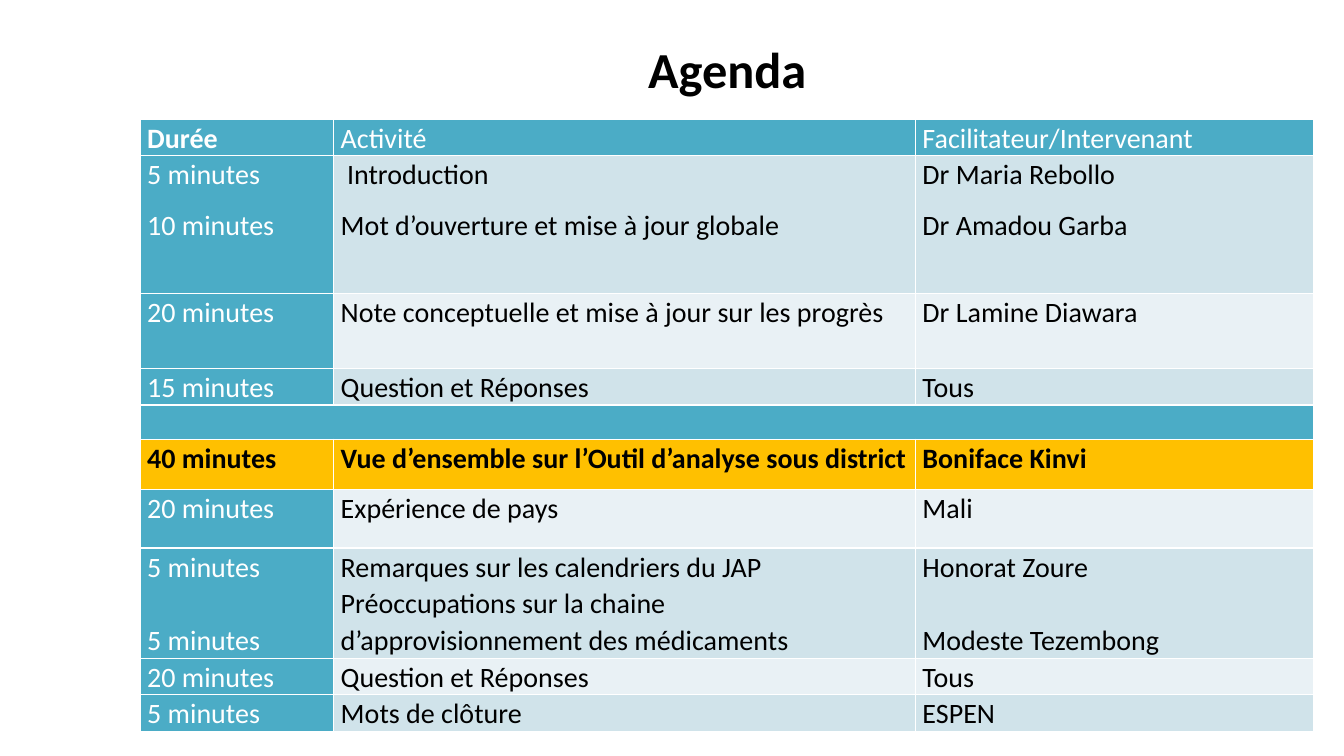
from lxml import etree
from pptx import Presentation
from pptx.dml.color import RGBColor
from pptx.enum import text
from pptx.oxml import ns
from pptx.util import Inches, Pt

BLACK = RGBColor(0x00, 0x00, 0x00)
WHITE = RGBColor(0xFF, 0xFF, 0xFF)
TEAL = RGBColor(0x4B, 0xAC, 0xC6)
BLUE_TINT = RGBColor(0xD0, 0xE3, 0xEA)
PALE_TINT = RGBColor(0xE9, 0xF1, 0xF5)
AMBER = RGBColor(0xFF, 0xC0, 0x00)

COLUMN_WIDTHS = (1.92, 5.77, 3.95)
LINE_ROW = 0.33
STACKED_ROW = 7  # two durations, one line apart
HIGHLIGHT_ROW = 5
# Each row: height, then the paragraphs of each cell; no cells means a divider.
AGENDA = [
    (LINE_ROW, ["Durée"], ["Activité"], ["Facilitateur/Intervenant"]),
    (1.37, ["5 minutes", "10 minutes"],
     [" Introduction", "Mot d’ouverture et mise à jour globale"],
     ["Dr Maria Rebollo", "Dr Amadou Garba"]),
    (0.74, ["20 minutes"], ["Note conceptuelle et mise à jour sur les progrès"],
     ["Dr Lamine Diawara"]),
    (LINE_ROW, ["15 minutes"], ["Question et Réponses"], ["Tous"]),
    (0.34,),
    (0.5, ["40 minutes"], ["Vue d’ensemble sur l’Outil d’analyse sous district"],
     ["Boniface Kinvi"]),
    (0.58, ["20 minutes"], ["Expérience de pays"], ["Mali"]),
    (1.02, ["5 minutes", "5 minutes"],
     ["Remarques sur les calendriers du JAP \v"
      "Préoccupations sur la chaine d’approvisionnement des médicaments"],
     ["Honorat Zoure", "Modeste Tezembong"]),
    (LINE_ROW, ["20 minutes"], ["Question et Réponses"], ["Tous"]),
    (LINE_ROW, ["5 minutes"], ["Mots de clôture"], ["ESPEN"]),
]


def write(para, words, size=20, color=BLACK, bold=False, align=None,
          spacing=None, before=0, after=0):
    """Put words in a paragraph and format them."""
    para.text = words
    para.alignment = align
    para.line_spacing = spacing
    para.space_before, para.space_after = Pt(before), Pt(after)
    for span in para.runs:
        span.font.name = "Calibri"
        span.font.size = Pt(size)
        span.font.bold = bold
        span.font.color.rgb = color


def border(cell, color=WHITE, width=1):
    properties = cell._tc.get_or_add_tcPr()
    for side in ("a:lnL", "a:lnR", "a:lnT", "a:lnB"):
        line = etree.SubElement(properties, ns.qn(side), w=str(Pt(width)))
        fill = etree.SubElement(line, ns.qn("a:solidFill"))
        etree.SubElement(fill, ns.qn("a:srgbClr"), val=str(color))


def cell_fill(row, column):
    if row == HIGHLIGHT_ROW:
        return AMBER
    if row == 0 or column == 0 or len(AGENDA[row]) == 1:
        return TEAL
    return BLUE_TINT if row % 2 else PALE_TINT


class AgendaSlide:
    def __init__(self, deck):
        self.page = deck.slides.add_slide(deck.slide_layouts[5])

    def title(self, words, left, top, width, height):
        box = self.page.shapes.title
        box.left, box.top = Inches(left), Inches(top)
        box.width, box.height = Inches(width), Inches(height)
        frame = box.text_frame
        frame.vertical_anchor = text.MSO_ANCHOR.MIDDLE
        write(frame.paragraphs[0], words, size=36, bold=True,
              align=text.PP_ALIGN.CENTER)

    def table(self, rows, left, top):
        width, height = sum(COLUMN_WIDTHS), sum(row[0] for row in rows)
        table = self.page.shapes.add_table(
            len(rows), len(COLUMN_WIDTHS), Inches(left), Inches(top),
            Inches(width), Inches(height)).table
        table.first_row = table.horz_banding = False
        for column, size in zip(table.columns, COLUMN_WIDTHS):
            column.width = Inches(size)
        for r, (row_height, *cells) in enumerate(rows):
            table.rows[r].height = Inches(row_height)
            for c in range(len(COLUMN_WIDTHS)):
                self.cell(table.cell(r, c), r, c, cells[c] if cells else [])
            if not cells:
                table.cell(r, 0).merge(table.cell(r, len(COLUMN_WIDTHS) - 1))

    def cell(self, cell, row, column, lines):
        cell.margin_left = cell.margin_right = Inches(0.07)
        cell.margin_top = cell.margin_bottom = 0
        border(cell)
        fill = cell_fill(row, column)
        cell.fill.solid()
        cell.fill.fore_color.rgb = fill
        stacked = row == STACKED_ROW
        frame = cell.text_frame
        for i, words in enumerate(lines):
            para = frame.add_paragraph() if i else frame.paragraphs[0]
            write(para, words, color=WHITE if fill == TEAL else BLACK,
                  bold=row == HIGHLIGHT_ROW or row == column == 0,
                  spacing=1.07, before=26 if stacked and i else 0,
                  after=0 if stacked else 10)


def main():
    deck = Presentation()
    deck.slide_width, deck.slide_height = Inches(13.33), Inches(7.5)
    agenda = AgendaSlide(deck)
    agenda.title("Agenda ", 1.52, 0.35, 11.5, 0.65)
    agenda.table(AGENDA, 1.39, 1.18)
    deck.save("out.pptx")


if __name__ == "__main__":
    main()
